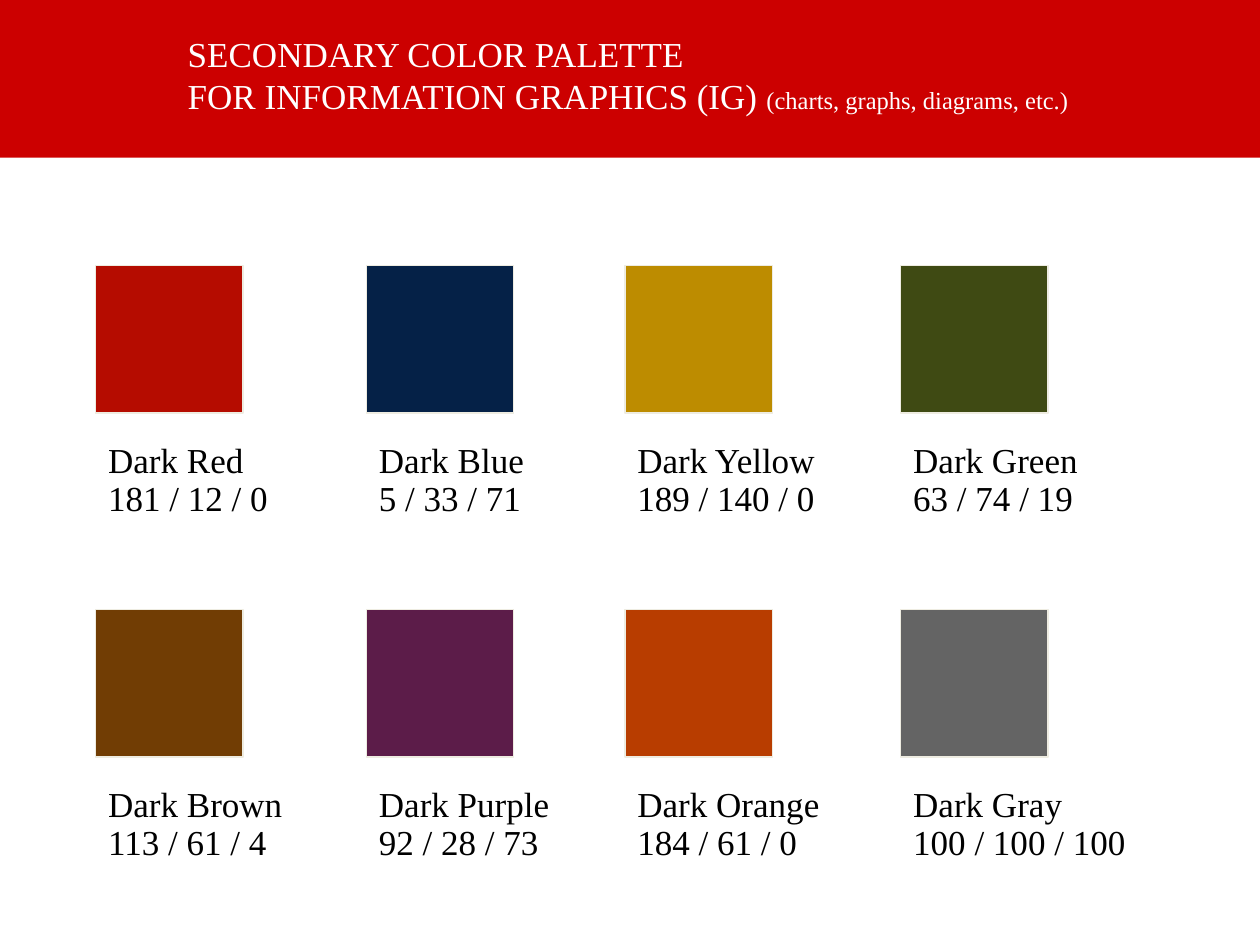
from itertools import product

from pptx import Presentation
from pptx.dml.color import RGBColor
from pptx.enum.shapes import MSO_SHAPE
from pptx.enum.text import MSO_ANCHOR, MSO_AUTO_SIZE, PP_ALIGN
from pptx.util import Cm, Pt

FONT = "Times New Roman"
BANNER_RED = RGBColor(204, 0, 0)
WHITE = RGBColor(255, 255, 255)
BLACK = RGBColor(0, 0, 0)
SWATCH_EDGE = RGBColor(238, 236, 225)

PALETTE = [
    ("Dark Red", RGBColor(181, 12, 0)),
    ("Dark Blue", RGBColor(5, 33, 71)),
    ("Dark Yellow", RGBColor(189, 140, 0)),
    ("Dark Green", RGBColor(63, 74, 19)),
    ("Dark Brown", RGBColor(113, 61, 4)),
    ("Dark Purple", RGBColor(92, 28, 73)),
    ("Dark Orange", RGBColor(184, 61, 0)),
    ("Dark Gray", RGBColor(100, 100, 100)),
]
COLUMNS = [1.93, 7.39, 12.6, 18.16]
ROWS = [5.36, 12.29]
SWATCH_SIZE = 2.97
LABEL_DROP = 3.45


def write(para, text, size=20, color=BLACK, spacing=None):
    para.alignment = PP_ALIGN.LEFT
    if spacing:
        para.line_spacing = spacing
    for index, line in enumerate(text.split("\n")):
        if index:
            para.add_line_break()
        span = para.add_run()
        span.text = line
        span.font.name = FONT
        span.font.size = Pt(size)
        span.font.color.rgb = color


def add_rectangle(page, left, top, width, height, fill, edge=None):
    box = page.shapes.add_shape(
        MSO_SHAPE.RECTANGLE, Cm(left), Cm(top), Cm(width), Cm(height))
    box.shadow.inherit = False
    box.fill.solid()
    box.fill.fore_color.rgb = fill
    if edge is None:
        box.line.fill.background()
    else:
        box.line.color.rgb = edge
        box.line.width = Pt(0.75)
    return box


def add_label(page, left, top, width, lines):
    box = page.shapes.add_textbox(Cm(left), Cm(top), Cm(width), Cm(2.11))
    frame = box.text_frame
    frame.word_wrap = True
    for index, line in enumerate(lines):
        para = frame.add_paragraph() if index else frame.paragraphs[0]
        write(para, line, spacing=0.9)


def add_banner(page):
    banner = add_rectangle(page, 0, 0, 25.4, 3.18, BANNER_RED)
    title = page.shapes.title
    banner._element.addnext(title._element)
    title.left, title.top = Cm(3.53), Cm(-0.08)
    title.width, title.height = Cm(19.15), Cm(3.18)
    frame = title.text_frame
    frame.auto_size = MSO_AUTO_SIZE.NONE
    frame.vertical_anchor = MSO_ANCHOR.MIDDLE
    para = frame.paragraphs[0]
    write(para, "SECONDARY COLOR PALETTE\nFOR INFORMATION GRAPHICS (IG) ", color=WHITE)
    write(para, "(charts, graphs, diagrams, etc.)", size=14, color=WHITE)


def add_swatch(page, left, top, name, color):
    values = " / ".join(str(channel) for channel in color)
    width = 5.41 if len(values) > 13 else 4.37
    add_label(page, left, top + LABEL_DROP, width, [name, values])
    add_rectangle(page, left, top, SWATCH_SIZE, SWATCH_SIZE, color, edge=SWATCH_EDGE)


def main():
    deck = Presentation()
    deck.slide_width, deck.slide_height = Cm(25.4), Cm(19.05)
    page = deck.slides.add_slide(deck.slide_layouts[5])
    add_banner(page)
    for (top, left), (name, color) in zip(product(ROWS, COLUMNS), PALETTE):
        add_swatch(page, left, top, name, color)
    deck.save("out.pptx")


if __name__ == "__main__":
    main()
